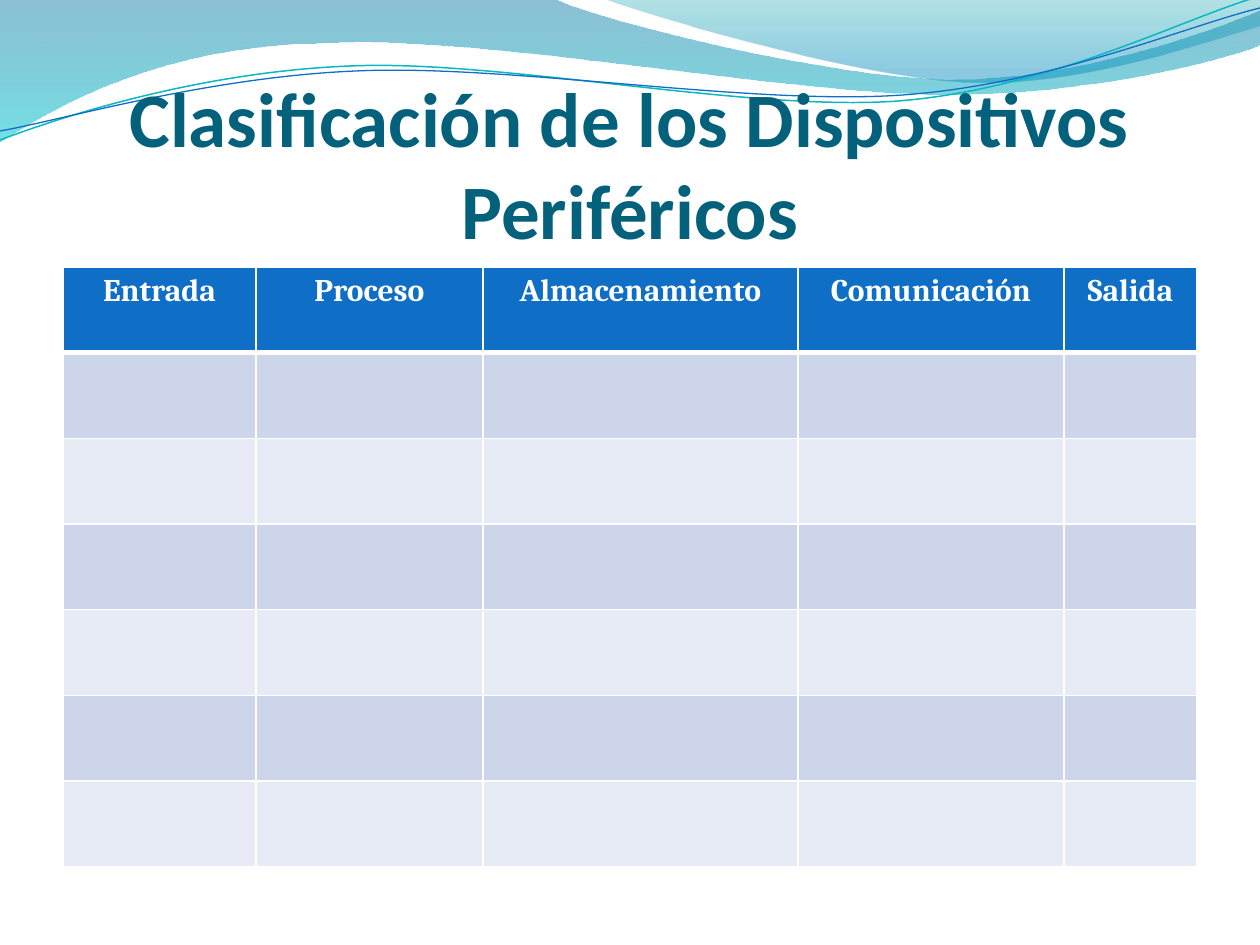
"""Build a slide with a wave header and an empty table of peripheral device classes."""
import dataclasses

import pptx
import pptx.dml.color
import pptx.enum.text
import pptx.oxml
import pptx.oxml.ns
import pptx.util

PX = 914400 // 126
qn = pptx.oxml.ns.qn


@dataclasses.dataclass(frozen=True)
class Theme:
    title: str = "04617B"
    header: str = "0F6FC6"
    bands: tuple = ("CCD5EA", "E7EBF5")
    white: str = "FFFFFF"
    teal: str = "0AB8BF"
    back_wave: tuple = ((0, "0074A1", 45), (1, "00C6CF", 55))
    front_wave: tuple = ((0, "00A1A9", 30), (0.8, "008BBF", 45))
    title_font: str = "Calibri"
    table_font: str = "Cambria"
    title_size: int = 44
    table_size: int = 18
    thin: int = 1
    thick: int = 3


def rgb(value):
    return pptx.dml.color.RGBColor.from_string(value)


def apply(target, values):
    for name, value in values.items():
        setattr(target, name, value)


class SlideBuilder:
    def __init__(self, page, theme):
        self.page = page
        self.theme = theme

    def add_text(self, frame, text, font, size, color):
        para = frame.paragraphs[0]
        para.alignment = pptx.enum.text.PP_ALIGN.CENTER
        span = para.add_run()
        span.text = text
        apply(span.font, {"name": font, "size": pptx.util.Pt(size), "bold": True})
        span.font.color.rgb = rgb(color)

    def outline(self, start, segments, close):
        builder = self.page.shapes.build_freeform(start[0] * PX, start[1] * PX)
        points = [(x * PX, y * PX) for segment in segments for x, y in segment]
        builder.add_line_segments(points, close=close)
        shape = builder.convert_to_shape()
        shape.shadow.inherit = False
        steps = iter(list(shape._element.iter(qn("a:lnTo"))))
        for segment in segments:
            first, *others = [next(steps) for _ in segment]
            if others:
                first.tag = qn("a:cubicBezTo")
                for step in others:
                    first.append(step[0])
                    step.getparent().remove(step)
        return shape

    def wave(self, start, segments, stops):
        shape = self.outline(start, segments, True)
        shape.line.fill.background()
        shape.fill.gradient()
        shape.fill.gradient_angle = 270
        for stop, (position, color, _) in zip(shape.fill.gradient_stops, stops):
            stop.position = position
            stop.color.rgb = rgb(color)
        colors = list(shape._element.spPr.iter(qn("a:srgbClr")))
        for color, (_, _, opacity) in zip(colors, stops):
            color.append(color.makeelement(qn("a:alpha"), {"val": str(opacity * 1000)}))

    def curve(self, start, segments, color, width):
        shape = self.outline(start, segments, False)
        shape.fill.background()
        shape.line.color.rgb = rgb(color)
        shape.line.width = pptx.util.Pt(width)

    def title(self, text, left, top, width, height):
        box = self.page.shapes.title
        apply(box, {"left": left * PX, "top": top * PX, "width": width * PX, "height": height * PX})
        apply(box.text_frame, {
            "margin_left": 0, "margin_right": 0, "margin_bottom": 0, "margin_top": 6 * PX,
            "word_wrap": True, "auto_size": pptx.enum.text.MSO_AUTO_SIZE.NONE,
            "vertical_anchor": pptx.enum.text.MSO_ANCHOR.BOTTOM,
        })
        theme = self.theme
        self.add_text(box.text_frame, text, theme.title_font, theme.title_size, theme.title)
        self.page.shapes._spTree.append(box._element)

    def borders(self, cell, widths):
        for side, width in widths.items():
            cell._tc.get_or_add_tcPr().append(pptx.oxml.parse_xml(
                f'<a:ln{side} {pptx.oxml.ns.nsdecls("a")} w="{width * 12700}"><a:solidFill>'
                f'<a:srgbClr val="{self.theme.white}"/></a:solidFill></a:ln{side}>'))

    def table(self, headings, widths, body_rows, left, top, height):
        theme = self.theme
        frame = self.page.shapes.add_table(
            body_rows + 1, len(headings), left * PX, top * PX, sum(widths) * PX, height * PX)
        grid = frame.table
        for column, width in zip(grid.columns, widths):
            column.width = width * PX
        for index, row in enumerate(grid.rows):
            fill = theme.bands[(index - 1) % 2] if index else theme.header
            for cell in row.cells:
                self.borders(cell, {
                    "L": theme.thin, "R": theme.thin,
                    "T": theme.thick if index == 1 else theme.thin,
                    "B": theme.thick if index == 0 else theme.thin,
                })
                cell.fill.solid()
                cell.fill.fore_color.rgb = rgb(fill)
        for cell, heading in zip(grid.rows[0].cells, headings):
            self.add_text(
                cell.text_frame, heading, theme.table_font, theme.table_size, theme.white)


def main():
    deck = pptx.Presentation()
    apply(deck, {"slide_width": pptx.util.Inches(10), "slide_height": pptx.util.Inches(7.5)})
    theme = Theme()
    slide = SlideBuilder(deck.slides.add_slide(deck.slide_layouts[5]), theme)

    slide.wave((-1, -1), [
        [(554, -1)],
        [(600, 21), (837, 79), (955, 79)],
        [(1075, 79), (1207, 33), (1260, 11)],
        [(1261, 45)],
        [(1239, 55), (1096, 96), (940, 94)],
        [(784, 94), (481, 35), (324, 43)],
        [(163, 45), (58, 105), (-1, 142)],
    ], theme.back_wave)
    slide.wave((604, -1), [
        [(641, 14), (859, 78), (969, 82)],
        [(1079, 87), (1211, 40), (1260, 26)],
        [(1260, 0)],
    ], theme.front_wave)
    slide.curve((0, 140), [
        [(60, 117), (199, 72), (349, 66)],
        [(498, 59), (747, 112), (898, 101)],
        [(1049, 89), (1182, 19), (1257, -3)],
    ], theme.teal, 0.85)
    slide.curve((0, 131), [
        [(59, 121), (207, 77), (357, 71)],
        [(508, 64), (752, 106), (903, 95)],
        [(1053, 84), (1186, 26), (1260, 8)],
    ], theme.header, 0.75)

    slide.title("Clasificación de los Dispositivos Periféricos", 63, 97, 1134, 158)
    slide.table(
        ["Entrada", "Proceso", "Almacenamiento", "Comunicación", "Salida"],
        [193, 227, 315, 266, 133], 6, 63, 267, 600)
    deck.save("out.pptx")


if __name__ == "__main__":
    main()
